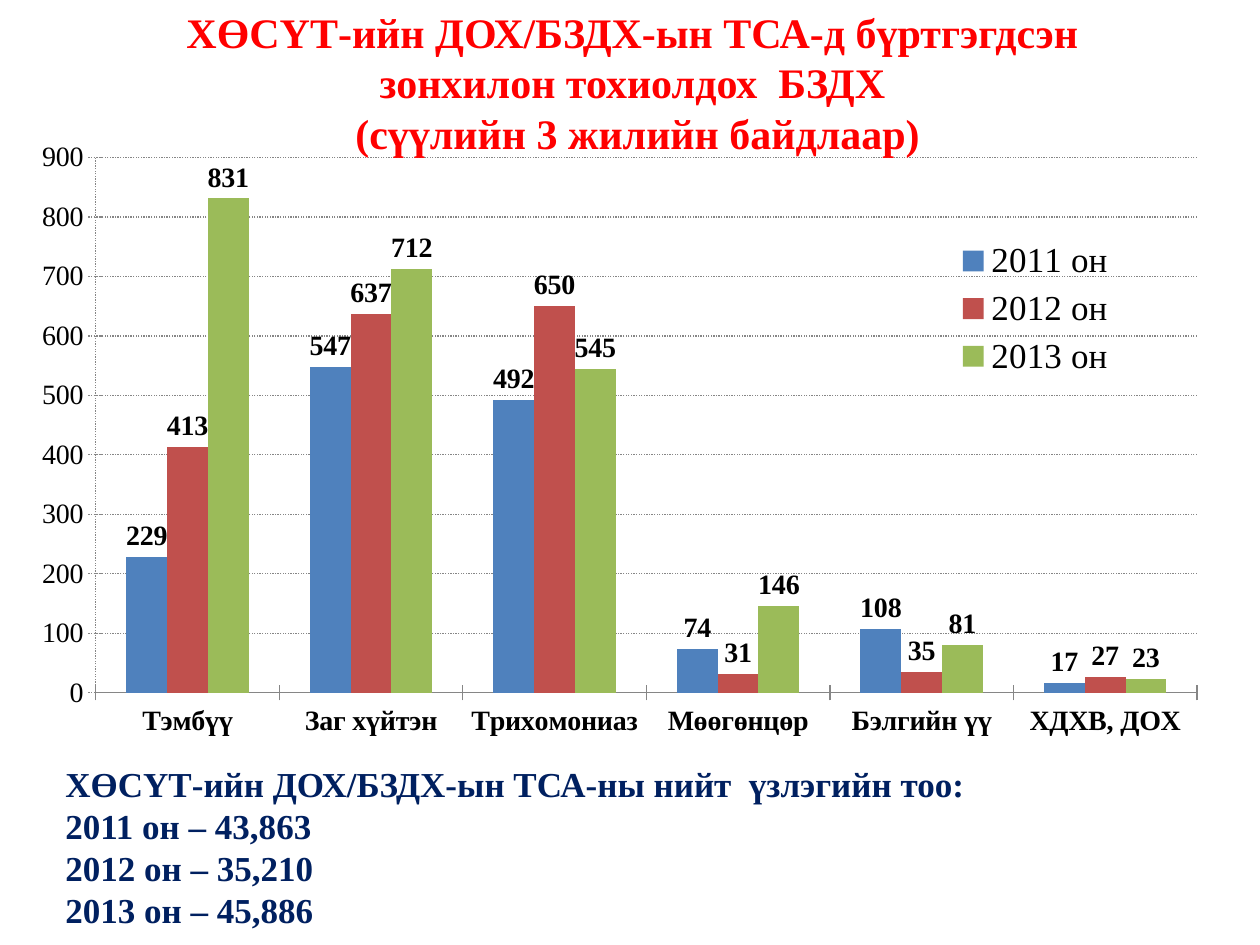
from lxml.etree import SubElement
from pptx import Presentation
from pptx.chart.data import CategoryChartData
from pptx.dml.color import RGBColor
from pptx.enum.chart import XL_CHART_TYPE as ChartType
from pptx.enum.chart import XL_LABEL_POSITION as LabelPosition
from pptx.enum.chart import XL_LEGEND_POSITION as LegendPosition
from pptx.enum.chart import XL_TICK_MARK as TickMark
from pptx.enum.dml import MSO_LINE_DASH_STYLE as Dash
from pptx.enum.text import MSO_ANCHOR as Anchor
from pptx.enum.text import PP_ALIGN as Align
from pptx.oxml.ns import qn
from pptx.util import Inches, Pt

FONT = "Times New Roman"
COLORS = {
    "title": "FF0000",
    "totals": "002060",
    "text": "000000",
    "grid": "868686",
    "2011 он": "4F81BD",
    "2012 он": "C0504D",
    "2013 он": "9BBB59",
}
CATEGORIES = ["Тэмбүү", "Заг хүйтэн", "Трихомониаз", "Мөөгөнцөр", "Бэлгийн үү", "ХДХВ, ДОХ"]
CASES = {
    "2011 он": [229, 547, 492, 74, 108, 17],
    "2012 он": [413, 637, 650, 31, 35, 27],
    "2013 он": [831, 712, 545, 146, 81, 23],
}
TITLE = [
    "ХӨСҮТ-ийн ДОХ/БЗДХ-ын ТСА-д бүртгэгдсэн ",
    "зонхилон тохиолдох  БЗДХ ",
    "(сүүлийн 3 жилийн байдлаар)",
]
TOTALS = [
    "ХӨСҮТ-ийн ДОХ/БЗДХ-ын ТСА-ны нийт  үзлэгийн тоо:",
    "2011 он – 43,863",
    "2012 он – 35,210",
    "2013 он – 45,886",
]


def color(name):
    return RGBColor.from_string(COLORS[name])


def set_font(font, size, name="text", bold=False):
    font.name = FONT
    font.size = Pt(size)
    font.bold = bold
    font.color.rgb = color(name)


def add_text(slide, box, lines, *, size, name, align=Align.LEFT):
    shape = slide.shapes.add_textbox(*map(Inches, box))
    frame = shape.text_frame
    frame.word_wrap = True
    frame.vertical_anchor = Anchor.TOP
    frame.text = "\n".join(lines)
    for paragraph in frame.paragraphs:
        paragraph.alignment = align
        set_font(paragraph.runs[0].font, size, name, bold=True)


def set_layout(parent, index, bounds, inner=False):
    for old in parent.findall(qn("c:layout")):
        parent.remove(old)
    layout = SubElement(parent, qn("c:layout"))
    parent.insert(index, layout)
    manual = SubElement(layout, qn("c:manualLayout"))
    settings = [("layoutTarget", "inner")] if inner else []
    settings += [("xMode", "edge"), ("yMode", "edge")]
    settings += zip("xywh", bounds)
    for tag, value in settings:
        SubElement(manual, qn(f"c:{tag}")).set("val", str(value))


def dot_line(line):
    line.color.rgb = color("grid")
    line.width = Pt(0.75)
    line.dash_style = Dash.ROUND_DOT


def style_axes(chart):
    category_axis, value_axis = chart.category_axis, chart.value_axis
    for axis, bold in ((category_axis, True), (value_axis, False)):
        axis.major_tick_mark = TickMark.CROSS
        set_font(axis.tick_labels.font, 16, bold=bold)
    category_axis.format.line.color.rgb = color("grid")
    value_axis.minimum_scale = 0
    value_axis.maximum_scale = 900
    value_axis.major_unit = 100
    value_axis.has_major_gridlines = True
    dot_line(value_axis.major_gridlines.format.line)
    dot_line(value_axis.format.line)


def style_series(series):
    series.format.fill.solid()
    series.format.fill.fore_color.rgb = color(series.name)
    series.invert_if_negative = False
    labels = series.data_labels
    labels.show_value = True
    labels.position = LabelPosition.OUTSIDE_END
    set_font(labels.font, 16, bold=True)


def add_cases_chart(slide, box):
    data = CategoryChartData()
    data.categories = CATEGORIES
    for year, values in CASES.items():
        data.add_series(year, values)
    chart = slide.shapes.add_chart(ChartType.COLUMN_CLUSTERED, *map(Inches, box), data).chart
    set_font(chart.font, 16)
    chart.has_title = False
    chart.has_legend = True
    chart.legend.position = LegendPosition.RIGHT
    chart.legend.include_in_layout = False
    set_font(chart.legend.font, 20)
    plot = chart.plots[0]
    plot.vary_by_categories = False
    plot.gap_width = 150
    plot.overlap = 0
    for series in plot.series:
        style_series(series)
    style_axes(chart)
    root = chart.element.find(qn("c:chart"))
    set_layout(root.find(qn("c:plotArea")), 0, (0.06, 0.05, 0.92, 0.85), inner=True)
    set_layout(root.find(qn("c:legend")), 1, (0.77, 0.17, 0.15, 0.24))


def main():
    presentation = Presentation()
    presentation.slide_width = Inches(10)
    presentation.slide_height = Inches(7.5)
    slide = presentation.slides.add_slide(presentation.slide_layouts[6])
    add_cases_chart(slide, (0.19, 1, 9.5, 5))
    add_text(slide, (0.42, 6, 9, 1.67), TOTALS, size=20, name="totals")
    add_text(slide, (0.42, 0, 9.28, 0.92), TITLE, size=24, name="title", align=Align.CENTER)
    presentation.save("out.pptx")


if __name__ == "__main__":
    main()
